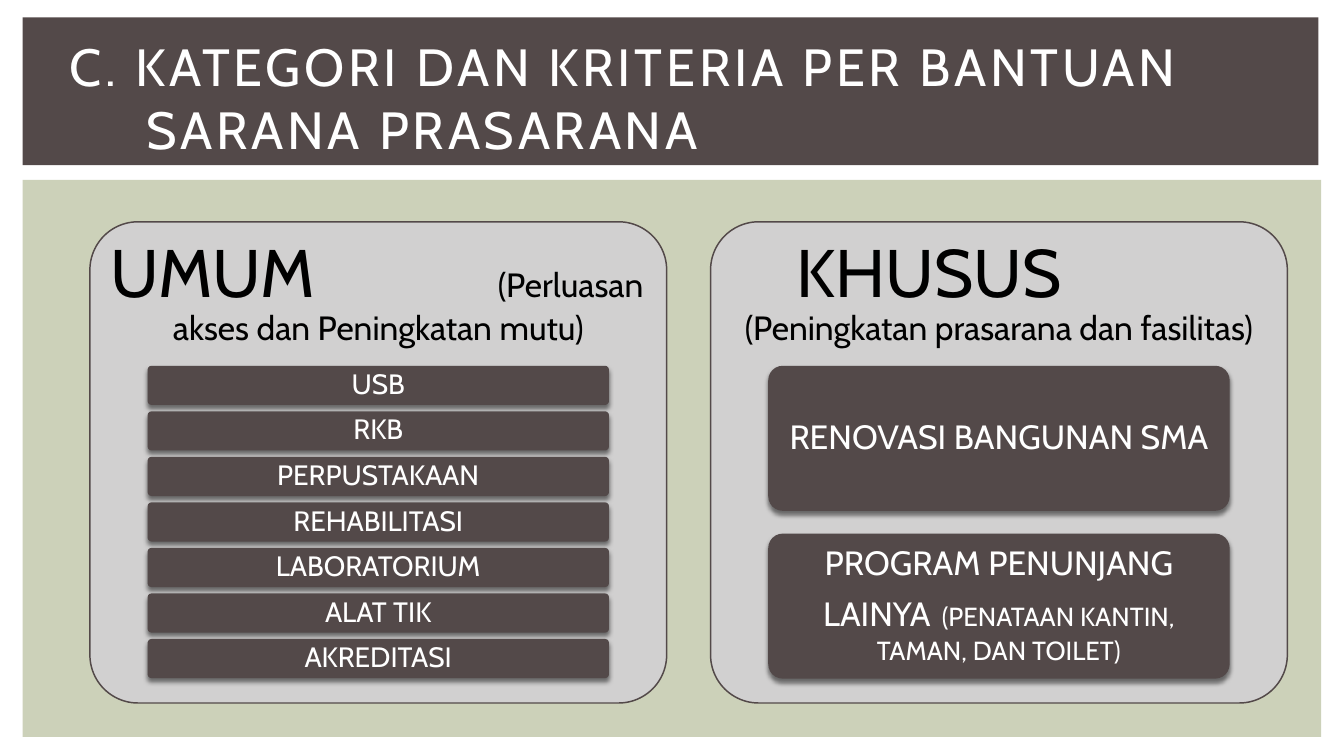
"""Build the slide on categories and criteria of school facility aid."""
from dataclasses import dataclass
from typing import Optional

from lxml.etree import SubElement as Sub
from pptx import Presentation as Deck
from pptx.dml.color import RGBColor as Rgb
from pptx.enum.shapes import MSO_SHAPE as Kind
from pptx.enum.text import MSO_ANCHOR as Anchor, PP_ALIGN as Align
from pptx.oxml.ns import qn
from pptx.shapes.autoshape import Shape
from pptx.slide import Slide
from pptx.util import Cm, Pt


@dataclass(frozen=True)
class Theme:
    font: str = "Cabin"
    dark: str = "534949"
    sage: str = "CCD1B9"
    gray: str = "D1D0D0"
    white: str = "FFFFFF"
    black: str = "000000"
    title: int = 28
    head: int = 36
    gap: int = 27
    body: int = 18
    pill: int = 15
    note: int = 14


@dataclass(frozen=True)
class Box:
    left: float
    top: float
    width: float
    height: float


@dataclass(frozen=True)
class Chunk:
    text: str
    size: int


@dataclass(frozen=True)
class Line:
    chunks: tuple[Chunk, ...]
    align: Align = Align.CENTER
    indent: float = 0
    tab: float = 0


@dataclass(frozen=True)
class Panel:
    left: float
    head: tuple[Line, ...]
    cards: tuple[Line, ...]
    pitch: float
    height: float


LOOK = Theme()
PANELS = (
    Panel(
        1.7,
        (
            Line((Chunk("UMUM\t", LOOK.head), Chunk("(Perluasan", LOOK.body)), Align.LEFT, tab=10.08),
            Line((Chunk("akses dan Peningkatan mutu)", LOOK.body),)),
        ),
        tuple(
            Line((Chunk(name, LOOK.pill),))
            for name in ("USB", "RKB", "PERPUSTAKAAN", "REHABILITASI",
                         "LABORATORIUM", "ALAT TIK", "AKREDITASI")
        ),
        0.86,
        0.74,
    ),
    Panel(
        13.43,
        (
            Line((Chunk("KHUSUS", LOOK.head),), Align.LEFT, indent=1.25),
            Line((Chunk("(Peningkatan prasarana dan fasilitas)", LOOK.body),)),
        ),
        (
            Line((Chunk("RENOVASI BANGUNAN SMA", LOOK.body),)),
            Line((
                Chunk("PROGRAM PENUNJANG LAINYA", LOOK.body),
                Chunk(" ", LOOK.gap),
                Chunk("(PENATAAN KANTIN, TAMAN, DAN TOILET)", LOOK.note),
            )),
        ),
        3.17,
        2.74,
    ),
)


def draw(slide: Slide, kind: Kind, box: Box, fill: str, edge: Optional[str] = None) -> Shape:
    shape = slide.shapes.add_shape(
        kind, Cm(box.left), Cm(box.top), Cm(box.width), Cm(box.height))
    shape.shadow.inherit = False
    shape.fill.solid()
    shape.fill.fore_color.rgb = Rgb.from_string(fill)
    if kind == Kind.ROUNDED_RECTANGLE:
        shape.adjustments[0] = 0.1
    if edge:
        shape.line.color.rgb = Rgb.from_string(edge)
        shape.line.width = Pt(0.79)
    else:
        shape.line.fill.background()
    return shape


def label(slide: Slide, box: Box) -> Shape:
    return slide.shapes.add_textbox(
        Cm(box.left), Cm(box.top), Cm(box.width), Cm(box.height))


def shade(shape: Shape) -> None:
    glow = Sub(
        shape.element.spPr.find(qn("a:effectLst")), qn("a:outerShdw"),
        blurRad=str(Pt(2.5)), dist=str(Pt(2)), dir="5400000", rotWithShape="0")
    tint = Sub(glow, qn("a:srgbClr"), val=LOOK.black)
    Sub(tint, qn("a:alpha"), val="50000")


def write(shape: Shape, lines: tuple[Line, ...], color: str, inset: tuple[float, float],
          space: float = 0.9, track: int = 0) -> None:
    frame = shape.text_frame
    frame.word_wrap = True
    frame.vertical_anchor = Anchor.MIDDLE
    frame.margin_left = frame.margin_right = Cm(inset[0])
    frame.margin_top = frame.margin_bottom = Cm(inset[1])
    for index, line in enumerate(lines):
        para = frame.add_paragraph() if index else frame.paragraphs[0]
        para.alignment = line.align
        para.line_spacing = space
        props = para._p.get_or_add_pPr()
        if line.indent:
            props.set("marL", str(Cm(line.indent)))
        if line.tab:
            stops = Sub(props, qn("a:tabLst"))
            Sub(stops, qn("a:tab"), pos=str(Cm(line.tab)), algn="r")
        for chunk in line.chunks:
            run = para.add_run()
            run.text = chunk.text
            run.font.name = LOOK.font
            run.font.size = Pt(chunk.size)
            run.font.color.rgb = Rgb.from_string(color)
            if track:
                run._r.get_or_add_rPr().set("spc", str(track * 100))


def add_panel(slide: Slide, panel: Panel) -> None:
    round_box = Kind.ROUNDED_RECTANGLE
    draw(slide, round_box, Box(panel.left, 4.19, 10.9, 9.09), LOOK.gray, LOOK.dark)
    head = label(slide, Box(panel.left, 4.19, 10.9, 2.72))
    write(head, panel.head, LOOK.black, (0.38, 0.38))
    for row, line in enumerate(panel.cards):
        place = Box(panel.left + 1.09, 6.91 + row * panel.pitch, 8.72, panel.height)
        card = draw(slide, round_box, place, LOOK.dark)
        shade(card)
        write(card, (line,), LOOK.white, (0.12, 0.09))


def main() -> None:
    deck = Deck()
    deck.slide_width, deck.slide_height = Cm(25.4), Cm(14.28)
    slide = deck.slides.add_slide(deck.slide_layouts[6])
    draw(slide, Kind.RECTANGLE, Box(0.43, 3.4, 24.54, 10.52), LOOK.sage)
    draw(slide, Kind.RECTANGLE, Box(0.43, 0.33, 24.49, 2.79), LOOK.dark)
    title = (
        Line((Chunk("C. KATEGORI DAN KRITERIA PER BANTUAN", LOOK.title),), Align.LEFT),
        Line((Chunk("SARANA PRASARANA", LOOK.title),), Align.LEFT, indent=1.45),
    )
    write(label(slide, Box(1.07, 0.74, 23.29, 2.18)), title, LOOK.white,
          (0.25, 0.13), space=1.0, track=2)
    for panel in PANELS:
        add_panel(slide, panel)
    deck.save("out.pptx")


if __name__ == "__main__":
    main()
